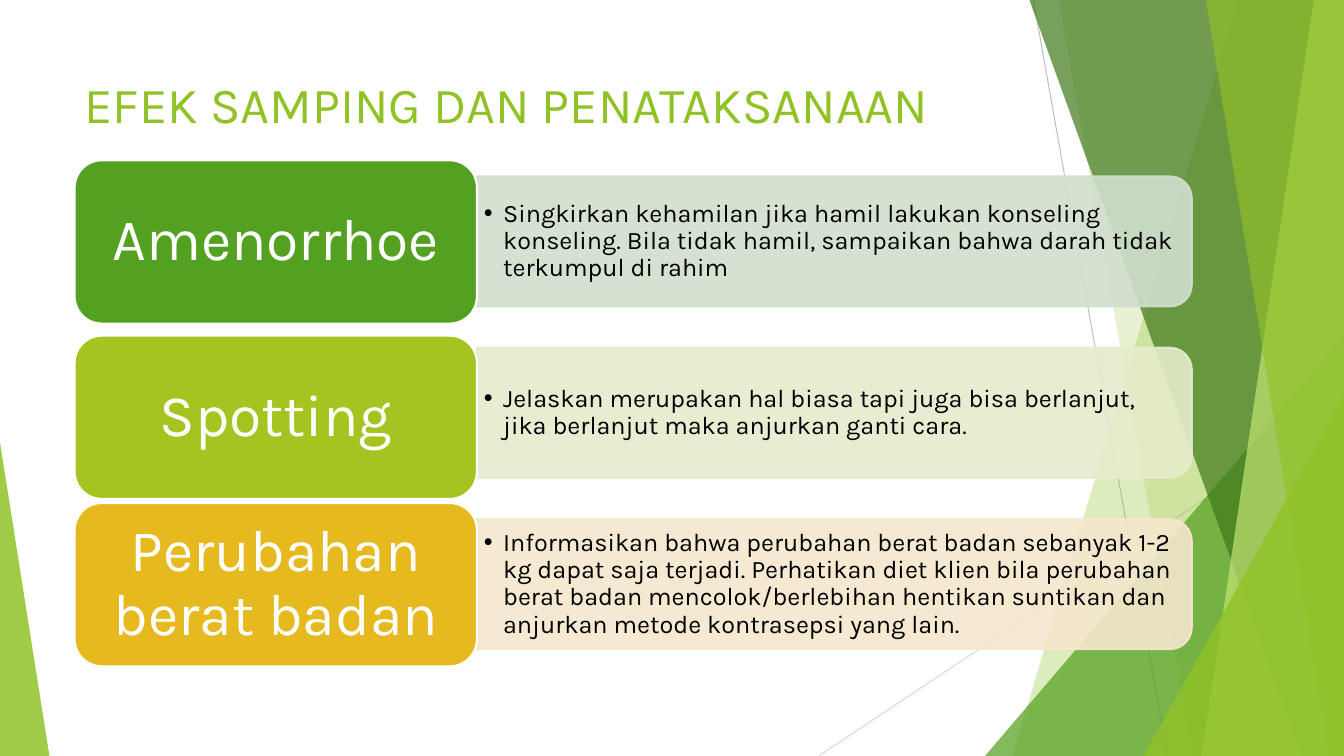
from lxml.etree import SubElement
from pptx import Presentation
from pptx.dml.color import RGBColor
from pptx.enum.shapes import MSO_CONNECTOR, MSO_SHAPE
from pptx.enum.text import MSO_ANCHOR, MSO_AUTO_SIZE, PP_ALIGN
from pptx.oxml.ns import qn
from pptx.util import Inches, Pt

FONT = "Karla"
COLORS = {
    "lime": "90C226", "green": "54A021", "forest": "3F7819", "pale": "C0E474",
    "olive": "A5C41F", "gold": "E6B91E", "green_tint": "D1DFCD",
    "olive_tint": "E5ECCB", "gold_tint": "F5E7CD", "gray": "BFBFBF",
    "light_gray": "D9D9D9", "white": "FFFFFF", "black": "000000",
}
FACETS = [
    ([(12.28, 0), (13.33, 0), (13.33, 7.5), (10.04, 7.5)], "lime", 30),
    ([(10.5, 0), (13.33, 0), (13.33, 7.5), (11.83, 7.5)], "lime", 20),
    ([(13.33, 3.33), (13.33, 7.5), (9.77, 7.5)], "green", 72),
    ([(10.21, 0), (13.33, 0), (13.33, 7.5), (12.91, 7.5)], "forest", 70),
    ([(13.03, 0), (13.33, 0), (13.33, 7.5), (11.92, 7.5)], "pale", 70),
    ([(11.96, 0), (13.33, 0), (13.33, 7.5), (13.18, 7.5)], "lime", 65),
    ([(13.33, 3.93), (13.33, 7.5), (11.34, 7.5)], "lime", 80),
    ([(0, 4.39), (0.49, 7.5), (0, 7.5)], "lime", 85),
]
RAYS = [(10.25, 0, 11.58, 7.5, "gray"), (13.33, 4.03, 8.12, 7.5, "light_gray")]
EFFECTS = [
    (1.59, "Amenorrhoe", "green", "green_tint",
     "Singkirkan kehamilan jika hamil lakukan konseling konseling. "
     "Bila tidak hamil, sampaikan bahwa darah tidak terkumpul di rahim"),
    (3.33, "Spotting", "olive", "olive_tint",
     "Jelaskan merupakan hal biasa tapi juga bisa berlanjut, "
     "jika berlanjut maka anjurkan ganti cara."),
    (4.99, "Perubahan berat badan", "gold", "gold_tint",
     "Informasikan bahwa perubahan berat badan sebanyak 1-2 kg dapat saja "
     "terjadi. Perhatikan diet klien bila perubahan berat badan "
     "mencolok/berlebihan hentikan suntikan dan anjurkan metode "
     "kontrasepsi yang lain."),
]


def rgb(name):
    """Return the named colour."""
    return RGBColor.from_string(COLORS[name])


def paint(sp, fill, line=None, opacity=100):
    """Set fill, outline and opacity of a shape."""
    sp.shadow.inherit = False
    sp.fill.solid()
    sp.fill.fore_color.rgb = rgb(fill)
    if line:
        sp.line.color.rgb = rgb(line)
        sp.line.width = Pt(1.5)
    else:
        sp.line.fill.background()
    if opacity < 100:
        for color in sp._element.spPr.iter(qn("a:srgbClr")):
            SubElement(color, qn("a:alpha"), val=str(opacity * 1000))


def write(sp, text, size, color, align, inset_x=0.1, inset_y=0.05, spacing=0.9):
    """Write one formatted paragraph, centred vertically, and return it."""
    tf = sp.text_frame
    tf.text = text
    tf.word_wrap = True
    tf.auto_size = MSO_AUTO_SIZE.NONE
    tf.vertical_anchor = MSO_ANCHOR.MIDDLE
    tf.margin_left = tf.margin_right = Inches(inset_x)
    tf.margin_top = tf.margin_bottom = Inches(inset_y)
    p = tf.paragraphs[0]
    p.alignment = align
    p.line_spacing = spacing
    font = p.runs[0].font
    font.name, font.size, font.color.rgb = FONT, Pt(size), rgb(color)
    return p


def add_backdrop(s):
    """Draw the thin rays and translucent facets along the slide edges."""
    for x1, y1, x2, y2, color in RAYS:
        ray = s.shapes.add_connector(
            MSO_CONNECTOR.STRAIGHT, Inches(x1), Inches(y1), Inches(x2), Inches(y2))
        ray.line.color.rgb = rgb(color)
        ray.line.width = Pt(0.75)
        SubElement(ray._element.spPr, qn("a:effectLst"))
    for points, color, opacity in FACETS:
        corners = [(Inches(x), Inches(y)) for x, y in points]
        builder = s.shapes.build_freeform(*corners[0])
        builder.add_line_segments(corners[1:], close=True)
        paint(builder.convert_to_shape(), color, opacity=opacity)


def add_title(s, text, x, y, w, h):
    """Place and format the title placeholder."""
    title = s.shapes.title
    title.left, title.top, title.width, title.height = map(Inches, (x, y, w, h))
    write(title, text, 36, "lime", PP_ALIGN.LEFT, spacing=1)


def add_panel(s, text, tint, x, y, w, h):
    """Draw a panel rounded on its right side with a bulleted text."""
    panel = s.shapes.add_shape(
        MSO_SHAPE.ROUND_2_SAME_RECTANGLE, Inches(x + (w - h) / 2),
        Inches(y + (h - w) / 2), Inches(h), Inches(w))
    panel.rotation = 90
    paint(panel, tint, tint, 90)
    box = s.shapes.add_textbox(
        Inches(x), Inches(y + 0.06), Inches(w - 0.07), Inches(h - 0.12))
    p = write(box, text, 18, "black", PP_ALIGN.LEFT, 0.07, 0.04)
    pPr = p._p.get_or_add_pPr()
    pPr.set("marL", str(Inches(0.19)))
    pPr.set("indent", str(-Inches(0.19)))
    SubElement(pPr, qn("a:buFont"), typeface="Arial")
    SubElement(pPr, qn("a:buChar"), char="•")


def add_label(s, text, color, x, y, w, h):
    """Draw a rounded label with large centred text."""
    label = s.shapes.add_shape(
        MSO_SHAPE.ROUNDED_RECTANGLE, Inches(x), Inches(y), Inches(w), Inches(h))
    paint(label, color, "white")
    write(label, text, 42, "white", PP_ALIGN.CENTER, 0.17, 0.09)


def add_effects(s, x, y, label_w, panel_w, pitch):
    """Stack the side effects, each a label beside its panel."""
    for i, (label_y, name, color, tint, advice) in enumerate(EFFECTS):
        add_panel(s, advice, tint, x + label_w, y + i * pitch, panel_w, 1.29)
        add_label(s, name, color, x, label_y, label_w, 1.62)


def main():
    """Build and save the slide."""
    prs = Presentation()
    prs.slide_width, prs.slide_height = Inches(13.33), Inches(7.5)
    s = prs.slides.add_slide(prs.slide_layouts[5])
    add_backdrop(s)
    add_title(s, "EFEK SAMPING DAN PENATAKSANAAN", 0.74, 0.67, 9.4, 0.72)
    add_effects(s, 0.74, 1.75, 3.99, 7.09, 1.7)
    prs.save("out.pptx")


if __name__ == "__main__":
    main()
